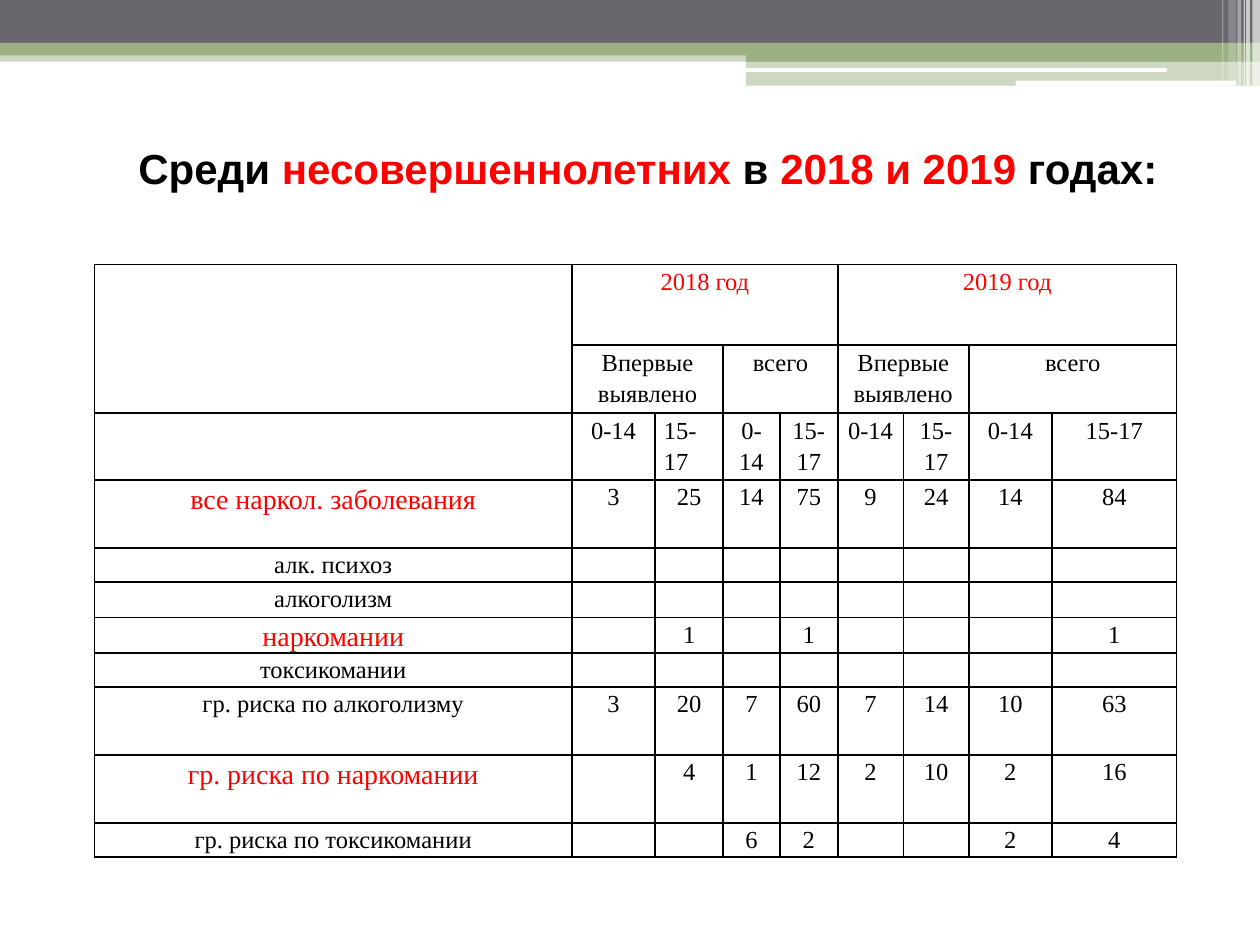
from dataclasses import dataclass

from lxml.etree import SubElement
from pptx import Presentation
from pptx.dml.color import RGBColor
from pptx.enum.shapes import MSO_SHAPE
from pptx.enum.text import MSO_ANCHOR, PP_ALIGN
from pptx.oxml.ns import qn
from pptx.util import Inches, Pt


@dataclass(frozen=True)
class Theme:
    gray: str = "69676D"
    green: str = "9CB084"
    white: str = "FFFFFF"
    black: str = "000000"
    red: str = "FF0000"
    title_font: str = "Arial"
    table_font: str = "Times New Roman"
    title_size: int = 24
    row_size: int = 16
    body_size: int = 14


THEME = Theme()

COLUMNS = [3.79, 0.66, 0.54, 0.45, 0.46, 0.52, 0.52, 0.66, 0.99]
ROWS = [0.64, 0.54, 0.53, 0.54, 0.27, 0.28, 0.27, 0.27, 0.54, 0.54, 0.27]
FOUND = "Впервые выявлено"
CELLS = [
    ["", "2018 год", "", "", "", "2019 год", "", "", ""],
    ["", FOUND, "", "всего", "", FOUND, "", "всего", ""],
    [""] + ["0-14", "15-17"] * 4,
    ["все наркол. заболевания", "3", "25", "14", "75", "9", "24", "14", "84"],
    ["алк. психоз"] + [""] * 8,
    ["алкоголизм"] + [""] * 8,
    ["наркомании", "", "1", "", "1", "", "", "", "1"],
    ["токсикомании"] + [""] * 8,
    ["гр. риска по алкоголизму", "3", "20", "7", "60", "7", "14", "10", "63"],
    ["гр. риска по наркомании", "", "4", "1", "12", "2", "10", "2", "16"],
    ["гр. риска по токсикомании", "", "", "6", "2", "", "", "2", "4"],
]
RED_ROWS = {3, 6, 9}
TITLE = [
    ("Среди ", THEME.black),
    ("несовершеннолетних", THEME.red),
    (" в ", THEME.black),
    ("2018 и 2019 ", THEME.red),
    ("годах:", THEME.black),
]


def style_run(r, font, size, color, bold=False):
    r.font.name = font
    r.font.size = Pt(size)
    r.font.bold = bold
    r.font.color.rgb = RGBColor.from_string(color)


def add_bar(slide, x, y, w, h, color, opacity=100, kind=MSO_SHAPE.RECTANGLE):
    sp = slide.shapes.add_shape(kind, Inches(x), Inches(y), Inches(w), Inches(h))
    sp.shadow.inherit = False
    sp.fill.solid()
    sp.fill.fore_color.rgb = RGBColor.from_string(color)
    sp.line.fill.background()
    if opacity < 100:
        clr = sp.element.spPr.find(qn("a:solidFill")).find(qn("a:srgbClr"))
        SubElement(clr, qn("a:alpha"), val=str(opacity * 1000))
    return sp


def add_header_band(slide, x, y, w):
    # Full-width bands
    add_bar(slide, x, y + 0.4, w, 0.09, THEME.green, 50)
    add_bar(slide, x, y, w, 0.34, THEME.gray)
    add_bar(slide, x, y + 0.34, w, 0.1, THEME.green)

    # Step on the right
    step = 4.08
    add_bar(slide, x + w - step, y + 0.39, step, 0.1, THEME.green)
    add_bar(slide, x + w - step, y + 0.48, step, 0.2, THEME.green, 50)
    for dx, dy, width, height in [(5.91, 0.54, 3.35, 0.03), (8.06, 0.64, 1.75, 0.04)]:
        add_bar(slide, x + dx, y + dy, width, height, THEME.white,
                kind=MSO_SHAPE.ROUNDED_RECTANGLE)

    # Light stripes: distance from the right edge, width, height, opacity
    stripes = [
        (0.06, 0.06, 0.68, 65), (0.11, 0.03, 0.68, 65), (0.13, 0.01, 0.68, 60),
        (0.18, 0.03, 0.68, 40), (0.25, 0.06, 0.64, 20), (0.3, 0.01, 0.64, 30),
    ]
    for offset, width, height, opacity in stripes:
        add_bar(slide, x + w - offset, y, width, height, THEME.white, opacity)


def add_title(slide, x, y, w, h):
    tf = slide.shapes.add_textbox(Inches(x), Inches(y), Inches(w), Inches(h)).text_frame
    tf.word_wrap = True
    tf.vertical_anchor = MSO_ANCHOR.MIDDLE
    tf.margin_bottom = Inches(0.33)
    p = tf.paragraphs[0]
    p._p.get_or_add_pPr().set("indent", str(Inches(0.49)))
    for text, color in TITLE:
        r = p.add_run()
        r.text = text
        style_run(r, THEME.title_font, THEME.title_size, color, bold=True)


def add_borders(cell):
    tcPr = cell._tc.get_or_add_tcPr()
    for side in ("lnL", "lnR", "lnT", "lnB"):
        ln = SubElement(tcPr, qn(f"a:{side}"), w=str(Pt(1)))
        SubElement(SubElement(ln, qn("a:solidFill")), qn("a:srgbClr"), val=THEME.black)


def fill_cell(cell, text, size, color, align):
    cell.margin_left = cell.margin_right = Inches(0.07)
    cell.margin_top = cell.margin_bottom = 0
    add_borders(cell)
    cell.fill.background()
    p = cell.text_frame.paragraphs[0]
    p.alignment = align
    p.line_spacing = 1.15
    if text:
        p.text = text
        style_run(p.runs[0], THEME.table_font, size, color)
    else:
        # Keeps empty cells from stretching their row
        SubElement(p._p, qn("a:endParaRPr"), sz=str(size * 100))


def add_cases_table(slide, x, y):
    frame = slide.shapes.add_table(len(ROWS), len(COLUMNS), Inches(x), Inches(y),
                                   Inches(sum(COLUMNS)), Inches(sum(ROWS)))
    table = frame.table
    table.first_row = table.horz_banding = False
    for column, width in zip(table.columns, COLUMNS):
        column.width = Inches(width)
    for row, height in zip(table.rows, ROWS):
        row.height = Inches(height)

    for i, texts in enumerate(CELLS):
        for j, text in enumerate(texts):
            key_row = i in RED_ROWS and j == 0
            size = THEME.row_size if key_row else THEME.body_size
            color = THEME.red if key_row or i == 0 else THEME.black
            align = PP_ALIGN.LEFT if (i, j) == (2, 2) else PP_ALIGN.CENTER
            fill_cell(table.cell(i, j), text, size, color, align)

    # Header spans: years over four columns, groups over two
    table.cell(0, 0).merge(table.cell(1, 0))
    for i, span in enumerate((4, 2)):
        for j in range(1, len(COLUMNS), span):
            table.cell(i, j).merge(table.cell(i, j + span - 1))


def main():
    prs = Presentation()
    prs.slide_width, prs.slide_height = Inches(10), Inches(7.5)
    s = prs.slides.add_slide(prs.slide_layouts[6])
    add_header_band(s, 0, 0, 10)
    add_cases_table(s, 0.75, 2.1)
    add_title(s, 0.51, 1.07, 8.86, 0.81)
    prs.save("out.pptx")


if __name__ == "__main__":
    main()
